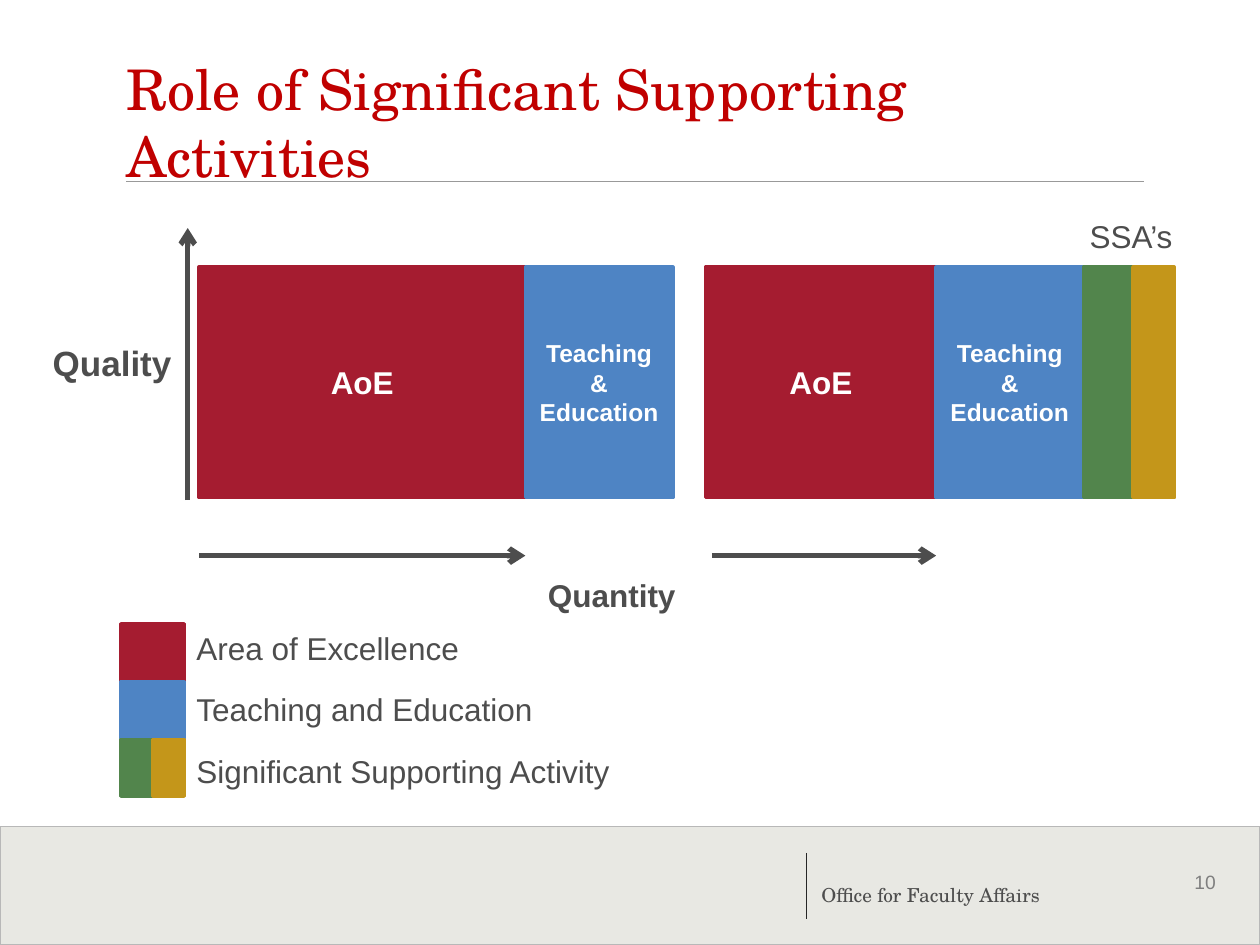
import pptx
import pptx.dml.color
import pptx.enum.shapes
import pptx.enum.text
import pptx.oxml.ns
import pptx.util
from lxml import etree
from pptx.util import Inches

SANS, SERIF = "Arial", "TeX Gyre Schola"
CRIMSON, BLUE, GREEN, GOLD = "A51C30", "4E84C4", "52854C", "C4961A"
DARK = "4D4D4D"
ALIGN = pptx.enum.text.PP_ALIGN
ANCHOR = pptx.enum.text.MSO_ANCHOR


def color(hex_string):
    return pptx.dml.color.RGBColor.from_string(hex_string)


def add_xml(parent, tag, **attributes):
    return etree.SubElement(parent, pptx.oxml.ns.qn(tag), attributes)


def write_text(shape, text, size=18, font=SANS, ink=DARK, bold=False,
               align=ALIGN.LEFT, anchor=ANCHOR.TOP, wrap=True):
    frame = shape.text_frame
    frame.auto_size = pptx.enum.text.MSO_AUTO_SIZE.NONE
    frame.word_wrap = wrap
    frame.vertical_anchor = anchor
    frame.text = text
    for paragraph in frame.paragraphs:
        paragraph.alignment = align
        paragraph.font.size = pptx.util.Pt(size)
        paragraph.font.name = font
        paragraph.font.bold = bold
        paragraph.font.color.rgb = color(ink)


def add_label(slide, text, left, top, width, height=0.4, **text_format):
    shape = slide.shapes.add_textbox(
        Inches(left), Inches(top), Inches(width), Inches(height))
    write_text(shape, text, **text_format)
    return shape


def add_block(slide, left, top, width, height, fill, line=None, line_width=2):
    shape = slide.shapes.add_shape(
        pptx.enum.shapes.MSO_SHAPE.RECTANGLE,
        Inches(left), Inches(top), Inches(width), Inches(height))
    shape.shadow.inherit = False
    shape.fill.solid()
    shape.fill.fore_color.rgb = color(fill)
    shape.line.color.rgb = color(line or fill)
    shape.line.width = pptx.util.Pt(line_width)
    return shape


def add_line(slide, start, end, ink=DARK, width=0.75, arrow=False):
    connector = slide.shapes.add_connector(
        pptx.enum.shapes.MSO_CONNECTOR.STRAIGHT,
        *[Inches(value) for value in (*start, *end)])
    connector.line.color.rgb = color(ink)
    connector.line.width = pptx.util.Pt(width)
    if arrow:
        add_xml(connector.line._get_or_add_ln(), "a:tailEnd", type="arrow")
    add_xml(connector._element.spPr, "a:effectLst")


def add_title(slide, left, top, width, height):
    title = slide.shapes.title
    title.left, title.top = Inches(left), Inches(top)
    title.width, title.height = Inches(width), Inches(height)
    write_text(title, "Role of Significant Supporting Activities", size=32,
               font=SERIF, ink="C00000", anchor=ANCHOR.BOTTOM)
    title.text_frame.margin_left = 0
    add_line(slide, (left, 1.44), (left + width, 1.44), ink="999999")


def add_footer(slide, left, top, width, height):
    band = add_block(slide, left, top, width, height, "D3D3C9", "B8B8B8", 0.75)
    fill_color = band._element.spPr.find(
        pptx.oxml.ns.qn("a:solidFill"))[0]
    add_xml(fill_color, "a:alpha", val="50000")
    add_line(slide, (left + 6.4, top + 0.21), (left + 6.4, top + 0.73),
             ink="262626")
    add_label(slide, "Office for Faculty Affairs", left + 6.42, top + 0.21,
              2.8, 0.47, size=11, font=SERIF, anchor=ANCHOR.BOTTOM)
    number = add_label(slide, "10", left + 9.18, top + 0.3, 0.7, 0.37,
                       size=11, ink="7F7F7F")
    number.text_frame.margin_left = Inches(0.3)


def add_bar(slide, left, top, height, segments):
    """Place (width, fill, text, size) segments side by side."""
    for width, fill, text, size in segments:
        block = add_block(slide, left, top, width, height, fill)
        if text:
            write_text(block, text, size=size, ink="FFFFFF", bold=True,
                       align=ALIGN.CENTER, anchor=ANCHOR.MIDDLE)
        left += width


def add_chart_area(slide, left, top, height):
    teaching = (1.17, BLUE, "Teaching\n&\nEducation", 14)
    bottom = top + height

    # Bars without and with supporting activities
    add_bar(slide, left, top, height, [(2.59, CRIMSON, "AoE", 18), teaching])
    add_bar(slide, left + 4.02, top, height,
            [(1.83, CRIMSON, "AoE", 18), teaching,
             (0.39, GREEN, "", 18), (0.33, GOLD, "", 18)])
    add_label(slide, "SSA’s", left + 6.97, top - 0.45, 1.04)

    # Quality axis
    add_line(slide, (left - 0.09, bottom + 0.02), (left - 0.09, top - 0.31),
             width=3, arrow=True)
    add_label(slide, "Quality", left - 1.26, top + 0.54, 1.17, 0.44,
              size=20, bold=True)

    # Quantity axes
    for start, end in ((0, 2.59), (4.07, 5.85)):
        add_line(slide, (left + start, bottom + 0.46),
                 (left + end, bottom + 0.46), width=3, arrow=True)
    add_label(slide, "Quantity", left + 2.67, bottom + 0.57, 1.35, bold=True)


def add_legend(slide, left, top, width):
    rows = [("Area of Excellence", [CRIMSON]),
            ("Teaching and Education", [BLUE]),
            ("Significant Supporting Activity", [GREEN, GOLD])]
    for index, (text, fills) in enumerate(rows):
        swatch = 0.5 / len(fills)
        add_bar(slide, left, top + index * 0.46, 0.45,
                [(swatch, fill, "", 18) for fill in fills])
        add_label(slide, text, left + 0.5, top - 0.01 + index * 0.49,
                  width - 0.5, wrap=False)


def main():
    presentation = pptx.Presentation()
    presentation.slide_width = Inches(10)
    presentation.slide_height = Inches(7.5)
    slide = presentation.slides.add_slide(presentation.slide_layouts[5])
    add_footer(slide, 0, 6.56, 10, 0.94)
    add_title(slide, 1, 0.3, 8.08, 1.25)
    add_chart_area(slide, 1.58, 2.12, 1.83)
    add_legend(slide, 0.96, 4.95, 4.07)
    presentation.save("out.pptx")


if __name__ == "__main__":
    main()
